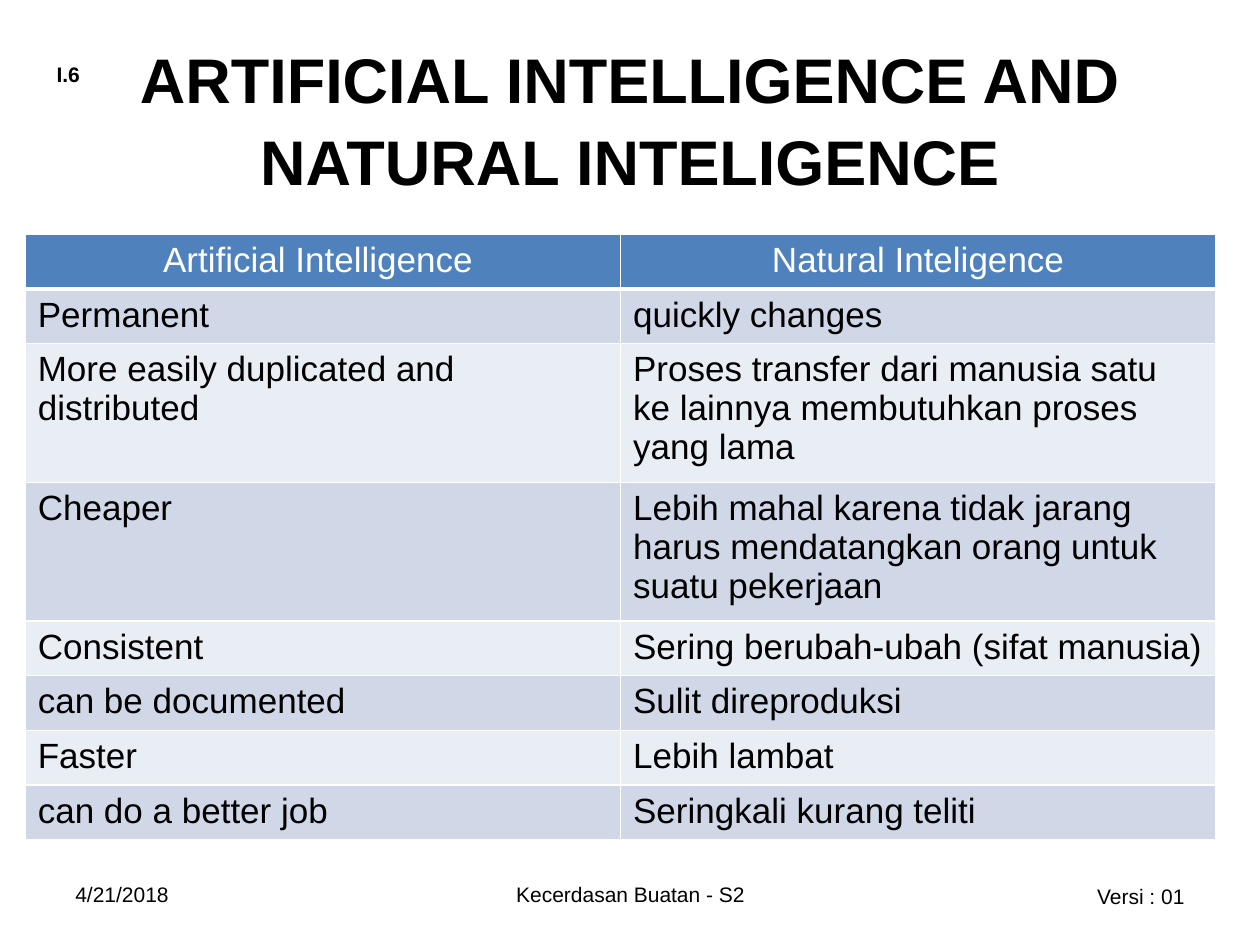
from dataclasses import dataclass

from lxml.etree import SubElement
from pptx import Presentation
from pptx.dml.color import RGBColor
from pptx.enum.text import MSO_ANCHOR, PP_ALIGN as Align
from pptx.oxml.ns import qn
from pptx.slide import Slide
from pptx.table import _Cell as Cell
from pptx.util import Inches, Pt


@dataclass(frozen=True)
class Theme:
    font: str = "Arial"
    ink: str = "000000"
    white: str = "FFFFFF"
    header: str = "4F81BD"
    bands: tuple[str, str] = ("D0D8E8", "E9EDF4")
    title_size: int = 36
    table_size: int = 20
    small_size: int = 12
    thin_rule: int = 1
    thick_rule: int = 3


@dataclass(frozen=True)
class Label:
    text: str
    left: float
    top: float
    width: float
    height: float
    align: Align = Align.LEFT
    size: int = Theme.small_size
    bold: bool = False
    anchor: MSO_ANCHOR = MSO_ANCHOR.TOP
    line_spacing: float = 1.0


LABELS = [
    Label("I.6", 0.35, 0.44, 1.81, 0.3, bold=True),
    Label("Versi : 01", 7.17, 6.96, 2.33, 0.3, Align.RIGHT),
    Label("ARTIFICIAL INTELLIGENCE AND NATURAL INTELIGENCE", 0.5, 0.3, 9, 1.25,
          Align.CENTER, Theme.title_size, True, MSO_ANCHOR.MIDDLE, 1.08),
    Label("4/21/2018", 0.5, 6.95, 2.33, 0.4),
    Label("Kecerdasan Buatan - S2", 3.42, 6.95, 3.17, 0.4, Align.CENTER),
]

COMPARISON = [
    ("Artificial Intelligence ", "Natural Inteligence"),
    ("Permanent", "quickly changes"),
    ("More easily duplicated and distributed",
     "Proses transfer dari manusia satu ke lainnya membutuhkan proses yang lama"),
    ("Cheaper",
     "Lebih mahal karena tidak jarang harus mendatangkan orang untuk suatu pekerjaan"),
    ("Consistent", "Sering berubah-ubah (sifat manusia)"),
    ("can be documented", "Sulit direproduksi"),
    ("Faster", "Lebih lambat"),
    ("can do a better job", "Seringkali kurang teliti"),
]
ROW_HEIGHT = 0.41


def style_paragraph(paragraph, theme: Theme, size: int, color: str,
                    align: Align, bold: bool = False) -> None:
    paragraph.alignment = align
    font = paragraph.font
    font.name, font.size, font.bold = theme.font, Pt(size), bold
    font.color.rgb = RGBColor.from_string(color)


def add_label(slide: Slide, label: Label, theme: Theme) -> None:
    box = slide.shapes.add_textbox(Inches(label.left), Inches(label.top),
                                   Inches(label.width), Inches(label.height))
    frame = box.text_frame
    frame.word_wrap = True
    frame.vertical_anchor = label.anchor
    frame.text = label.text
    paragraph = frame.paragraphs[0]
    paragraph.line_spacing = label.line_spacing
    style_paragraph(paragraph, theme, label.size, theme.ink, label.align, label.bold)


def add_borders(cell: Cell, color: str, top: int, bottom: int, side: int) -> None:
    """Draw the cell's four rules, widths in points; call before filling the cell."""
    properties = cell._tc.get_or_add_tcPr()
    for edge, width in (("lnL", side), ("lnR", side), ("lnT", top), ("lnB", bottom)):
        line = SubElement(properties, qn(f"a:{edge}"), w=str(Pt(width)))
        SubElement(SubElement(line, qn("a:solidFill")), qn("a:srgbClr"), val=color)


def add_comparison(slide: Slide, theme: Theme) -> None:
    table = slide.shapes.add_table(
        len(COMPARISON), 2, Inches(0.2), Inches(1.86),
        Inches(9.45), Inches(ROW_HEIGHT * len(COMPARISON))).table
    for row_index, entries in enumerate(COMPARISON):
        table.rows[row_index].height = Inches(ROW_HEIGHT)
        is_header = row_index == 0
        fill = theme.header if is_header else theme.bands[(row_index - 1) % 2]
        color = theme.white if is_header else theme.ink
        align = Align.CENTER if is_header else Align.LEFT
        top = theme.thick_rule if row_index == 1 else theme.thin_rule
        bottom = theme.thick_rule if is_header else theme.thin_rule
        for column, entry in enumerate(entries):
            cell = table.cell(row_index, column)
            cell.text = entry
            add_borders(cell, theme.white, top, bottom, theme.thin_rule)
            cell.fill.solid()
            cell.fill.fore_color.rgb = RGBColor.from_string(fill)
            style_paragraph(cell.text_frame.paragraphs[0], theme,
                            theme.table_size, color, align)


def main() -> None:
    theme = Theme()
    deck = Presentation()
    deck.slide_width, deck.slide_height = Inches(10), Inches(7.5)
    slide = deck.slides.add_slide(deck.slide_layouts[6])
    for label in LABELS:
        add_label(slide, label, theme)
    add_comparison(slide, theme)
    deck.save("out.pptx")


if __name__ == "__main__":
    main()
